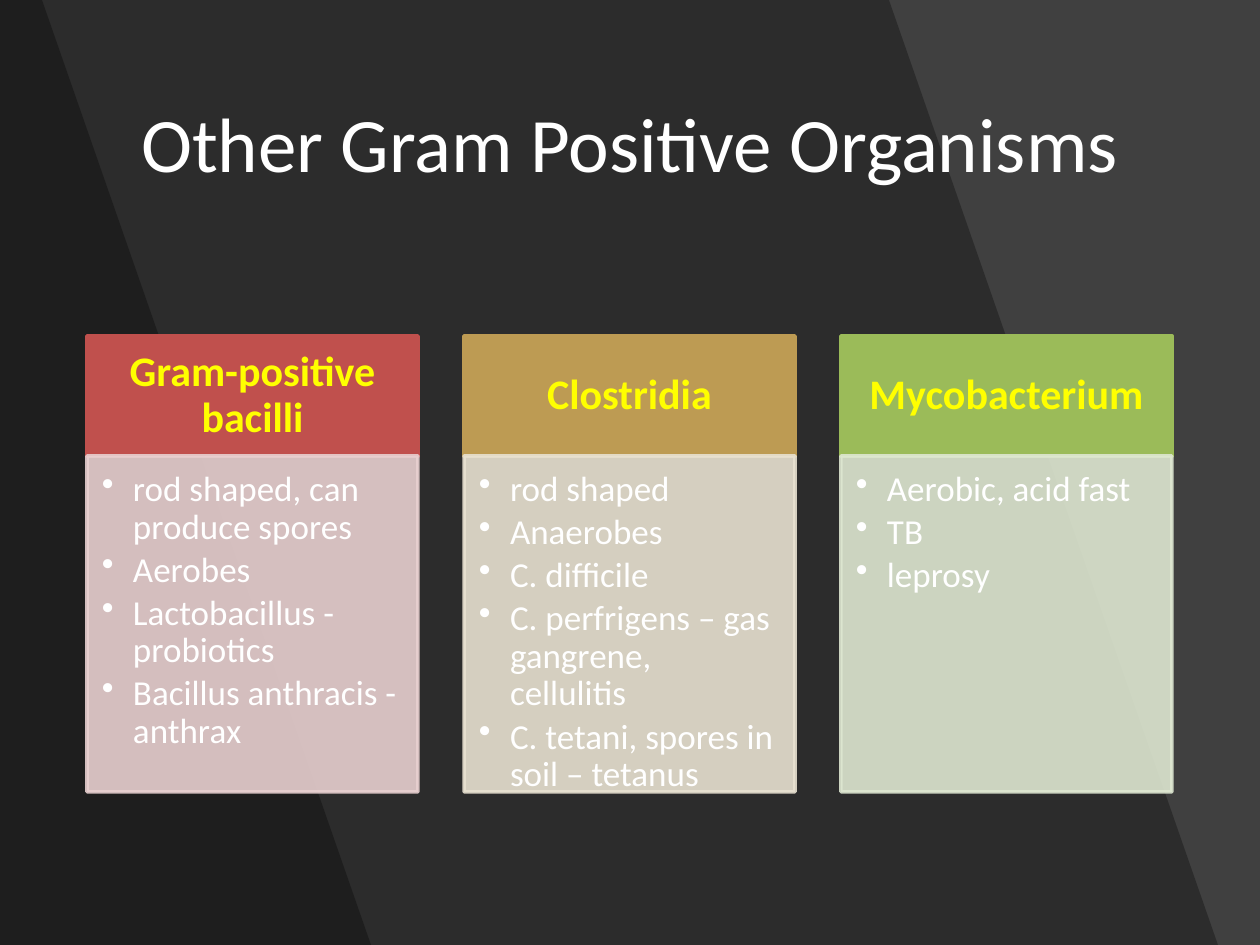
from dataclasses import dataclass

from lxml.etree import SubElement
from pptx import Presentation
from pptx.dml.color import RGBColor
from pptx.enum.shapes import MSO_SHAPE as Preset
from pptx.enum.text import MSO_ANCHOR as Anchor, PP_ALIGN as Align
from pptx.oxml.ns import qn
from pptx.shapes.autoshape import Shape
from pptx.slide import Slide
from pptx.text.text import TextFrame
from pptx.util import Emu, Pt

EMU_PER_PX = 914400 / 126
PAGE_WIDTH, PAGE_HEIGHT = 1260, 945
FONT = "Calibri"

BLACK = RGBColor(0x00, 0x00, 0x00)
GREY = RGBColor(0x40, 0x40, 0x40)
WHITE = RGBColor(0xFF, 0xFF, 0xFF)
YELLOW = RGBColor(0xFF, 0xFF, 0x00)
RED = RGBColor(0xC0, 0x50, 0x4D)
PALE_RED = RGBColor(0xE8, 0xD0, 0xD0)
GOLD = RGBColor(0xBD, 0x9B, 0x53)
PALE_GOLD = RGBColor(0xE8, 0xE1, 0xD1)
GREEN = RGBColor(0x9B, 0xBB, 0x59)
PALE_GREEN = RGBColor(0xDE, 0xE7, 0xD1)

BAND_SLANT = 329
BAND_TOPS = (889, 42)

COLUMN_LEFT, COLUMN_PITCH, COLUMN_WIDTH = 87, 377, 331
HEADING_TOP, HEADING_HEIGHT = 336, 120
BODY_TOP, BODY_HEIGHT = HEADING_TOP + HEADING_HEIGHT, 336
BULLET_INDENT = 31


@dataclass(frozen=True)
class Column:
    heading: str
    color: RGBColor
    pale: RGBColor
    points: tuple[str, ...]


COLUMNS = (
    Column("Gram-positive bacilli", RED, PALE_RED, (
        "rod shaped, can produce spores",
        "Aerobes",
        "Lactobacillus - probiotics",
        "Bacillus anthracis - anthrax",
    )),
    Column("Clostridia", GOLD, PALE_GOLD, (
        "rod shaped",
        "Anaerobes",
        "C. difficile",
        "C. perfrigens – gas gangrene, cellulitis",
        "C. tetani, spores in soil – tetanus",
    )),
    Column("Mycobacterium", GREEN, PALE_GREEN, (
        "Aerobic, acid fast",
        "TB",
        "leprosy",
    )),
)


def px(length: int) -> Emu:
    return Emu(round(length * EMU_PER_PX))


def set_opacity(color_parent, percent: int) -> None:
    for color in color_parent.iter(qn("a:srgbClr")):
        SubElement(color, qn("a:alpha"), val=str(percent * 1000))


def paint(shape: Shape, color: RGBColor, opacity: int = 100, outlined: bool = False) -> None:
    shape.shadow.inherit = False
    shape.fill.solid()
    shape.fill.fore_color.rgb = color
    if outlined:
        shape.line.color.rgb = color
        shape.line.width = Pt(2)
    else:
        shape.line.fill.background()
    if opacity < 100:
        set_opacity(shape.element.spPr, opacity)


def add_box(page: Slide, left: int, top: int, width: int, height: int) -> Shape:
    return page.shapes.add_shape(Preset.RECTANGLE, px(left), px(top), px(width), px(height))


def add_band(page: Slide, top_right: int) -> None:
    builder = page.shapes.build_freeform(0, 0, scale=EMU_PER_PX)
    builder.add_line_segments([
        (top_right, 0), (top_right + BAND_SLANT, PAGE_HEIGHT), (0, PAGE_HEIGHT),
    ])
    paint(builder.convert_to_shape(), BLACK, opacity=30)


def set_frame(frame: TextFrame, anchor: Anchor, insets: tuple[int, int, int, int]) -> None:
    frame.word_wrap = True
    frame.vertical_anchor = anchor
    frame.margin_left, frame.margin_top, frame.margin_right, frame.margin_bottom = map(px, insets)


def write(para, text: str, size: int, color: RGBColor, align: Align, bold: bool = False) -> None:
    para.text = text
    para.alignment = align
    para.font.name = FONT
    para.font.size = Pt(size)
    para.font.bold = bold
    para.font.color.rgb = color


def add_bullet(para) -> None:
    properties = para._p.get_or_add_pPr()
    properties.set("marL", str(px(BULLET_INDENT)))
    properties.set("indent", str(-px(BULLET_INDENT)))
    bullet = properties.makeelement(qn("a:buChar"), {"char": "•"})
    properties.insert_element_before(bullet, "a:tabLst", "a:defRPr", "a:extLst")


def add_title(page: Slide, text: str) -> None:
    box = page.shapes.add_textbox(px(86), px(50), px(1088), px(183))
    set_frame(box.text_frame, Anchor.MIDDLE, (13, 6, 13, 6))
    write(box.text_frame.paragraphs[0], text, 44, WHITE, Align.CENTER)


def add_column(page: Slide, column: Column, left: int) -> None:
    heading = add_box(page, left, HEADING_TOP, COLUMN_WIDTH, HEADING_HEIGHT)
    paint(heading, column.color, outlined=True)
    set_frame(heading.text_frame, Anchor.MIDDLE, (24, 14, 24, 14))
    para = heading.text_frame.paragraphs[0]
    write(para, column.heading, 24, YELLOW, Align.CENTER, bold=True)
    para.line_spacing = 0.9

    body = add_box(page, left, BODY_TOP, COLUMN_WIDTH, BODY_HEIGHT)
    paint(body, column.pale, opacity=90, outlined=True)
    frame = body.text_frame
    set_frame(frame, Anchor.TOP, (15, 15, 20, 21))
    for index, point in enumerate(column.points):
        para = frame.add_paragraph() if index else frame.paragraphs[0]
        write(para, point, 20, WHITE, Align.LEFT)
        para.line_spacing = 0.9
        para.space_after = Pt(3)
        add_bullet(para)


def main() -> None:
    deck = Presentation()
    deck.slide_width, deck.slide_height = px(PAGE_WIDTH), px(PAGE_HEIGHT)
    page = deck.slides.add_slide(deck.slide_layouts[6])
    page.background.fill.solid()
    page.background.fill.fore_color.rgb = BLACK
    paint(add_box(page, 0, 0, PAGE_WIDTH, PAGE_HEIGHT), GREY)
    for top_right in BAND_TOPS:
        add_band(page, top_right)
    add_title(page, "Other Gram Positive Organisms")
    for index, column in enumerate(COLUMNS):
        add_column(page, column, COLUMN_LEFT + index * COLUMN_PITCH)
    deck.save("out.pptx")


if __name__ == "__main__":
    main()
